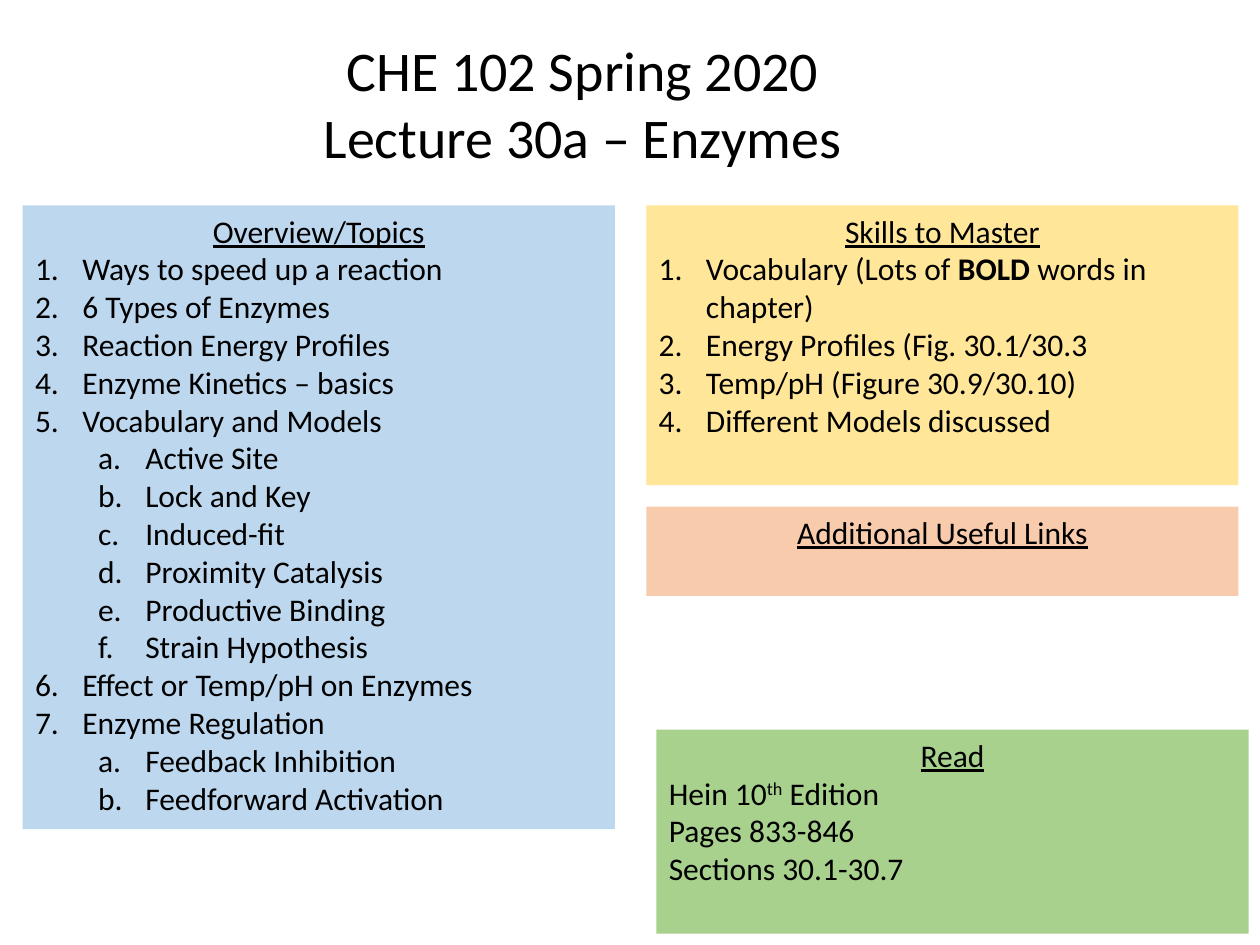
from dataclasses import dataclass
from typing import NamedTuple

from lxml.etree import SubElement
from pptx import Presentation
from pptx.dml.color import RGBColor
from pptx.enum.shapes import MSO_SHAPE
from pptx.enum.text import MSO_ANCHOR, PP_ALIGN
from pptx.oxml.ns import qn
from pptx.util import Emu, Inches, Pt


@dataclass(frozen=True)
class Theme:
    font: str = "Calibri"
    ink: str = "000000"
    topics: str = "BDD7EE"
    skills: str = "FFE699"
    links: str = "F8CBAD"
    reading: str = "A9D18E"
    title_size: int = 32
    body_size: int = 18


class Area(NamedTuple):
    column: float
    row: float
    columns: float
    rows: float


class Span(NamedTuple):
    text: str
    bold: bool = False
    underline: bool = False
    baseline: int = 0


class Line(NamedTuple):
    spans: tuple[Span, ...]
    numbering: str = ""
    level: int = 0
    align: PP_ALIGN = PP_ALIGN.LEFT


@dataclass(frozen=True)
class Panel:
    heading: str
    color: str
    area: Area
    lines: tuple[Line, ...] = ()


THEME = Theme()
SLIDE_WIDTH, SLIDE_HEIGHT = Inches(10), Inches(7.5)
GRID_COLUMNS, GRID_ROWS = 100, 75
LEFT_COLUMN, RIGHT_COLUMN, PANEL_COLUMNS, PANEL_ROW = 1.8, 51.3, 47, 16.3
HANGING, LEVEL_STEP = Inches(0.375), Inches(0.5)


def plain(text: str) -> Line:
    return Line((Span(text),))


def item(*spans: Span) -> Line:
    return Line(spans, "arabicPeriod")


def items(*texts: str) -> tuple[Line, ...]:
    return tuple(item(Span(text)) for text in texts)


def subitems(*texts: str) -> tuple[Line, ...]:
    return tuple(Line((Span(text),), "alphaLcPeriod", 1) for text in texts)


TITLE = tuple(
    Line((Span(text),), align=PP_ALIGN.CENTER)
    for text in ("CHE 102 Spring 2020", "Lecture 30a – Enzymes")
)
TITLE_AREA = Area(24.5, 2.3, 43.5, 11.8)

PANELS = (
    Panel(
        "Overview/Topics", THEME.topics,
        Area(LEFT_COLUMN, PANEL_ROW, PANEL_COLUMNS, 49.5),
        items("Ways to speed up a reaction", "6 Types of Enzymes",
              "Reaction Energy Profiles", "Enzyme Kinetics – basics",
              "Vocabulary and Models")
        + subitems("Active Site", "Lock and Key", "Induced-fit",
                   "Proximity Catalysis", "Productive Binding",
                   "Strain Hypothesis")
        + items("Effect or Temp/pH on Enzymes", "Enzyme Regulation")
        + subitems("Feedback Inhibition", "Feedforward Activation"),
    ),
    Panel(
        "Skills to Master", THEME.skills,
        Area(RIGHT_COLUMN, PANEL_ROW, PANEL_COLUMNS, 22.2),
        (item(Span("Vocabulary (Lots of "), Span("BOLD ", bold=True),
              Span("words in chapter)")),)
        + items("Energy Profiles (Fig. 30.1/30.3",
                "Temp/pH (Figure 30.9/30.10)", "Different Models discussed"),
    ),
    Panel(
        "Read", THEME.reading,
        Area(52.1, 57.9, PANEL_COLUMNS, 16.2),
        (Line((Span("Hein 10"), Span("th", baseline=30000), Span(" Edition"))),
         plain("Pages 833-846"), plain("Sections 30.1-30.7")),
    ),
    Panel(
        "Additional Useful Links", THEME.links,
        Area(RIGHT_COLUMN, 40.2, PANEL_COLUMNS, 7.1),
    ),
)


def place(area: Area) -> tuple[Emu, Emu, Emu, Emu]:
    column, row = SLIDE_WIDTH / GRID_COLUMNS, SLIDE_HEIGHT / GRID_ROWS
    return (Emu(round(area.column * column)), Emu(round(area.row * row)),
            Emu(round(area.columns * column)), Emu(round(area.rows * row)))


def number(paragraph, line: Line) -> None:
    properties = paragraph._p.get_or_add_pPr()
    properties.set("marL", str(HANGING + line.level * LEVEL_STEP))
    properties.set("indent", str(-HANGING))
    SubElement(properties, qn("a:buFont"), typeface=THEME.font)
    SubElement(properties, qn("a:buAutoNum"), type=line.numbering)


def write_span(paragraph, span: Span, size: int) -> None:
    run = paragraph.add_run()
    run.text = span.text
    formats = {"name": THEME.font, "size": Pt(size),
               "bold": span.bold, "underline": span.underline}
    for attribute, value in formats.items():
        setattr(run.font, attribute, value)
    run.font.color.rgb = RGBColor.from_string(THEME.ink)
    if span.baseline:
        run._r.get_or_add_rPr().set("baseline", str(span.baseline))


def write_lines(frame, lines: tuple[Line, ...], size: int, wrap: bool) -> None:
    frame.word_wrap = wrap
    frame.vertical_anchor = MSO_ANCHOR.TOP
    for index, line in enumerate(lines):
        paragraph = frame.add_paragraph() if index else frame.paragraphs[0]
        paragraph.alignment = line.align
        paragraph.level = line.level
        if line.numbering:
            number(paragraph, line)
        for span in line.spans:
            write_span(paragraph, span, size)


def draw_panel(slide, panel: Panel) -> None:
    card = slide.shapes.add_shape(MSO_SHAPE.RECTANGLE, *place(panel.area))
    card.shadow.inherit = False
    card.fill.solid()
    card.fill.fore_color.rgb = RGBColor.from_string(panel.color)
    card.line.fill.background()
    heading = Line((Span(panel.heading, underline=True),), align=PP_ALIGN.CENTER)
    write_lines(card.text_frame, (heading, *panel.lines), THEME.body_size, True)


def main() -> None:
    deck = Presentation()
    deck.slide_width, deck.slide_height = SLIDE_WIDTH, SLIDE_HEIGHT
    slide = deck.slides.add_slide(deck.slide_layouts[6])
    for panel in PANELS:
        draw_panel(slide, panel)
    title = slide.shapes.add_textbox(*place(TITLE_AREA))
    write_lines(title.text_frame, TITLE, THEME.title_size, False)
    deck.save("out.pptx")


if __name__ == "__main__":
    main()
